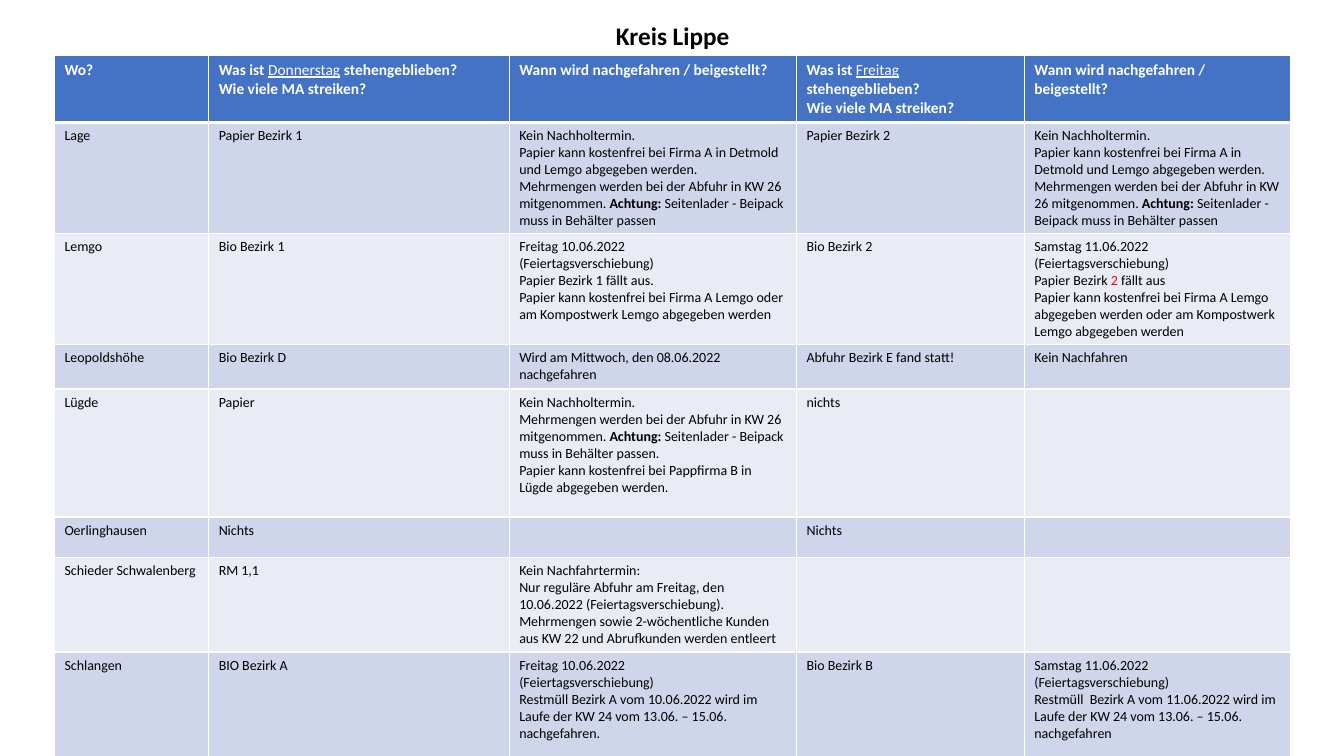
from lxml.etree import SubElement
from pptx import Presentation
from pptx.dml.color import RGBColor
from pptx.enum.text import MSO_ANCHOR, MSO_AUTO_SIZE, PP_ALIGN
from pptx.oxml.ns import qn
from pptx.util import Inches, Pt

WIDTH, HEIGHT = Inches(13.33), Inches(7.5)
BLACK = RGBColor(0x00, 0x00, 0x00)
WHITE = RGBColor(0xFF, 0xFF, 0xFF)
RED = RGBColor(0xFF, 0x00, 0x00)
HEADER_BLUE = RGBColor(0x44, 0x72, 0xC4)
BAND_DARK = RGBColor(0xCF, 0xD5, 0xEA)
BAND_LIGHT = RGBColor(0xE9, 0xEB, 0xF5)

TITLE_FONT = {"name": "Calibri", "size": Pt(18), "bold": True}
HEADER_FONT = {"name": "Calibri", "size": Pt(11), "bold": True}
BODY_FONT = {"name": "Calibri", "size": Pt(10), "bold": False}
DAY_FONT = {"bold": False, "underline": True}
STRONG_FONT = {"bold": True}

COLUMN_SHARES = [11.48, 22.36, 21.38, 16.95, 19.8]
ROW_SHARES = [8.87, 14.67, 14.67, 5.87, 16.93, 5.33, 12.53, 18.75]

NO_DATE = "Kein Nachholtermin."
SHIFTED = "(Feiertagsverschiebung)"
FRIDAY = "Freitag 10.06.2022"
SATURDAY = "Samstag 11.06.2022"
FOLLOW_UP = "Wann wird nachgefahren / beigestellt?"


def day_question(day):
    return [["Was ist ", (day, DAY_FONT, WHITE), " stehengeblieben?"],
            "Wie viele MA streiken?"]


def surplus(ending=""):
    return ["Mehrmengen werden bei der Abfuhr in KW 26 mitgenommen. ",
            ("Achtung: ", STRONG_FONT, BLACK),
            "Seitenlader - Beipack muss in Behälter passen" + ending]


PAPER_LAGE = [
    NO_DATE,
    "Papier kann kostenfrei bei Firma A in Detmold und Lemgo abgegeben werden.",
    surplus(),
]

ROWS = [
    [["Wo?"], day_question("Donnerstag"), [FOLLOW_UP],
     day_question("Freitag"), [FOLLOW_UP]],
    [["Lage"], ["Papier Bezirk 1"], PAPER_LAGE, ["Papier Bezirk 2"], PAPER_LAGE],
    [["Lemgo"], ["Bio Bezirk 1"],
     [FRIDAY, SHIFTED, "Papier Bezirk 1 fällt aus.",
      "Papier kann kostenfrei bei Firma A Lemgo oder am Kompostwerk Lemgo "
      "abgegeben werden"],
     ["Bio Bezirk 2"],
     [SATURDAY, SHIFTED, ["Papier Bezirk ", ("2", {}, RED), " fällt aus"],
      "Papier kann kostenfrei bei Firma A Lemgo abgegeben werden oder am "
      "Kompostwerk Lemgo abgegeben werden"]],
    [["Leopoldshöhe"], ["Bio Bezirk D"],
     ["Wird am Mittwoch, den 08.06.2022 nachgefahren"],
     ["Abfuhr Bezirk E fand statt!"], ["Kein Nachfahren"]],
    [["Lügde"], ["Papier"],
     [NO_DATE, surplus("."),
      "Papier kann kostenfrei bei Pappfirma B in Lügde abgegeben werden."],
     ["nichts"], []],
    [["Oerlinghausen"], ["Nichts"], [], ["Nichts"], []],
    [["Schieder Schwalenberg"], ["RM 1,1"],
     ["Kein Nachfahrtermin:",
      "Nur reguläre Abfuhr am Freitag, den 10.06.2022 (Feiertagsverschiebung). "
      "Mehrmengen sowie 2-wöchentliche Kunden aus KW 22 und Abrufkunden "
      "werden entleert"],
     [], []],
    [["Schlangen"], ["BIO Bezirk A"],
     [FRIDAY, SHIFTED,
      "Restmüll Bezirk A vom 10.06.2022 wird im Laufe der KW 24 vom "
      "13.06. – 15.06. nachgefahren."],
     ["Bio Bezirk B"],
     [SATURDAY, SHIFTED,
      "Restmüll  Bezirk A vom 11.06.2022 wird im Laufe der KW 24 vom "
      "13.06. – 15.06. nachgefahren"]],
]


def across(share):
    return round(WIDTH * share / 100)


def down(share):
    return round(HEIGHT * share / 100)


def set_attributes(target, formats):
    for name, value in formats.items():
        setattr(target, name, value)


def add_run(paragraph, text, formats, color):
    run = paragraph.add_run()
    run.text = text
    set_attributes(run.font, formats)
    run.font.color.rgb = color


def write_paragraphs(text_frame, paragraphs, base_font, base_color):
    for index, content in enumerate(paragraphs):
        paragraph = text_frame.add_paragraph() if index else text_frame.paragraphs[0]
        for part in [content] if isinstance(content, str) else content:
            text, formats, color = (
                (part, {}, base_color) if isinstance(part, str) else part)
            add_run(paragraph, text, {**base_font, **formats}, color)


def add_borders(cell, widths):
    properties = cell._tc.get_or_add_tcPr()
    for side, width in widths.items():
        line = SubElement(properties, qn(f"a:ln{side}"), w=str(Pt(width)))
        fill = SubElement(line, qn("a:solidFill"))
        SubElement(fill, qn("a:srgbClr"), val=str(WHITE))


def add_title(slide, text):
    title = slide.shapes.title
    set_attributes(title, {"left": across(45.06), "top": down(2),
                           "width": across(9.98), "height": down(5.33)})
    set_attributes(title.text_frame, {
        "word_wrap": False, "auto_size": MSO_AUTO_SIZE.SHAPE_TO_FIT_TEXT,
        "vertical_anchor": MSO_ANCHOR.TOP})
    write_paragraphs(title.text_frame, [text], TITLE_FONT, BLACK)
    set_attributes(title.text_frame.paragraphs[0],
                   {"alignment": PP_ALIGN.CENTER, "line_spacing": 1.0,
                    "space_before": Pt(0)})


def fill_cell(cell, content, row_index):
    header = row_index == 0
    add_borders(cell, {"L": 1, "R": 1, "T": 3 if row_index == 1 else 1,
                       "B": 3 if header else 1})
    cell.fill.solid()
    if header:
        cell.fill.fore_color.rgb = HEADER_BLUE
        write_paragraphs(cell.text_frame, content, HEADER_FONT, WHITE)
    else:
        cell.fill.fore_color.rgb = BAND_DARK if row_index % 2 else BAND_LIGHT
        write_paragraphs(cell.text_frame, content, BODY_FONT, BLACK)


def add_schedule(slide, rows):
    table = slide.shapes.add_table(
        len(rows), len(COLUMN_SHARES), across(4.05), down(7.33),
        across(sum(COLUMN_SHARES)), down(sum(ROW_SHARES))).table
    for column, share in zip(table.columns, COLUMN_SHARES):
        column.width = across(share)
    for row_index, (row, share) in enumerate(zip(table.rows, ROW_SHARES)):
        row.height = down(share)
        for cell, content in zip(row.cells, rows[row_index]):
            fill_cell(cell, content, row_index)


def main():
    presentation = Presentation()
    set_attributes(presentation, {"slide_width": WIDTH, "slide_height": HEIGHT})
    slide = presentation.slides.add_slide(presentation.slide_layouts[5])
    add_title(slide, "Kreis Lippe")
    add_schedule(slide, ROWS)
    presentation.save("out.pptx")


if __name__ == "__main__":
    main()
